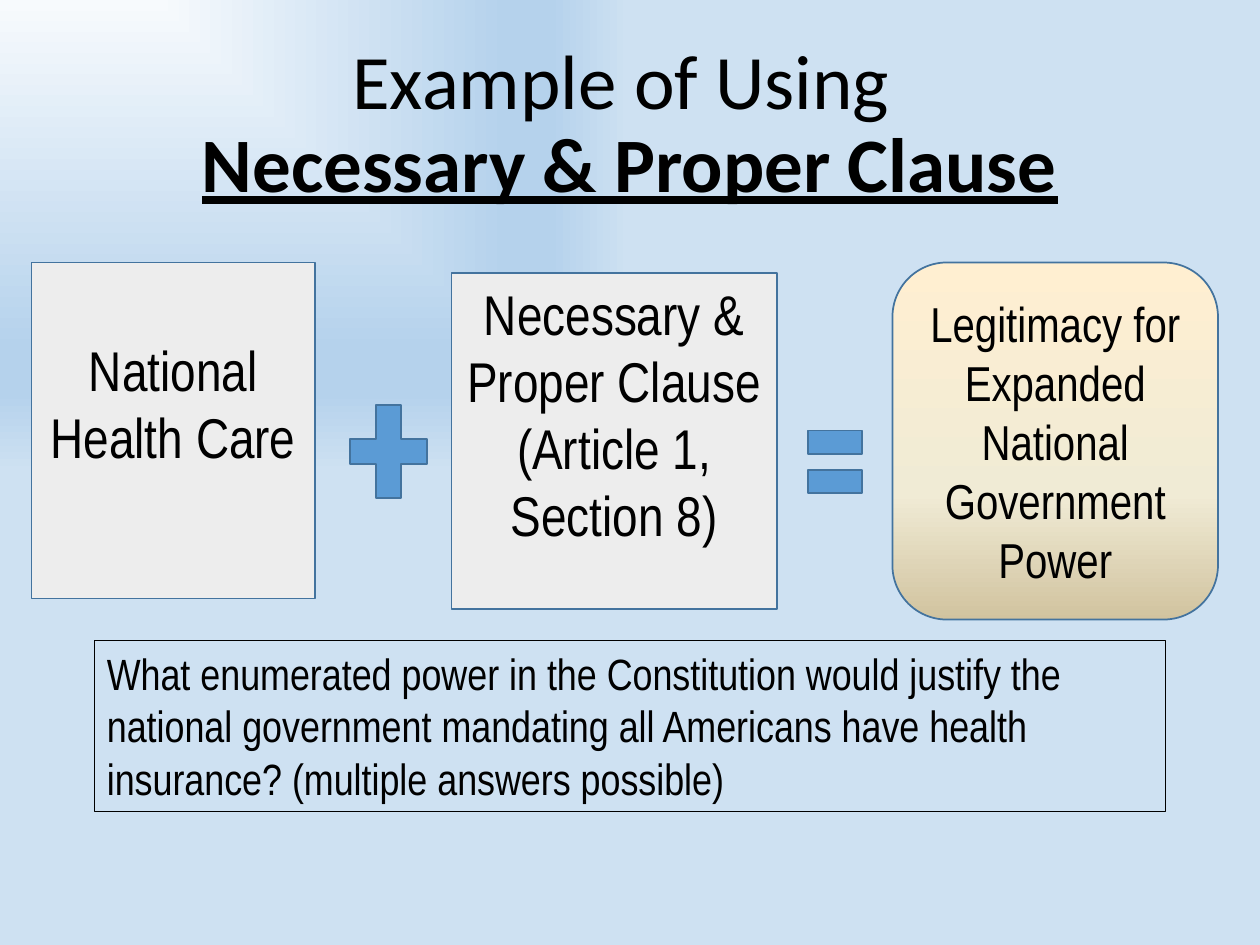
from lxml import etree
from pptx import Presentation
from pptx import util as u
from pptx.dml.color import RGBColor
from pptx.enum import shapes, text
from pptx.oxml.ns import qn

COLS, ROWS = 120, 90
HUES = {"ink": "000000", "grey": "EDEDED", "blue": "5B9BD5", "edge": "43739E"}
SKY = [(0, "F7FAFD"), (74, "B5D2EC"), (83, "B5D2EC"), (100, "CEE1F2")]
SAND = [(0, "FFEFD1"), (65, "F0EBD5"), (100, "D1C39F")]
FORM = shapes.MSO_SHAPE
MID = text.MSO_ANCHOR.MIDDLE
TOP = text.MSO_ANCHOR.TOP


def rgb(name):
    return RGBColor.from_string(HUES[name])


class Deck:
    def __init__(self):
        self.show = Presentation()
        self.show.slide_width, self.show.slide_height = u.Inches(10), u.Inches(7.5)
        self.slide = self.show.slides.add_slide(self.show.slide_layouts[6])
        self.face = "Arial Narrow"

    def place(self, col, row, wide, high):
        """Turn grid units into left, top, width and height."""
        across, down = self.show.slide_width / COLS, self.show.slide_height / ROWS
        return [round(n) for n in (col * across, row * down, wide * across, high * down)]

    def blend(self, fill, root, stops, angle=None):
        """Set a linear gradient, or one spreading from the top left corner."""
        fill.gradient()
        grad = next(root.iter(qn("a:gradFill")))
        for child in list(grad):
            grad.remove(child)
        chain = etree.SubElement(grad, qn("a:gsLst"))
        for share, hue in stops:
            stop = etree.SubElement(chain, qn("a:gs"), pos=str(share * 1000))
            etree.SubElement(stop, qn("a:srgbClr"), val=hue)
        if angle is None:
            glow = etree.SubElement(grad, qn("a:path"), path="rect")
            etree.SubElement(glow, qn("a:fillToRect"), r="100000", b="100000")
        else:
            etree.SubElement(grad, qn("a:lin"), ang=str(angle * 60000), scaled="0")

    def back(self, stops):
        self.blend(self.slide.background.fill, self.slide.element, stops)

    def title(self, spot, plain, strong):
        frame = self.slide.shapes.add_textbox(*self.place(*spot)).text_frame
        frame.word_wrap, frame.vertical_anchor = True, MID
        para = frame.paragraphs[0]
        para.alignment, para.line_spacing = text.PP_ALIGN.CENTER, 0.9
        para.font.name, para.font.size = "Calibri", u.Pt(44)
        para.font.color.rgb = rgb("ink")
        para.add_run().text = plain
        para.add_line_break()
        run = para.add_run()
        run.text = strong
        run.font.bold = run.font.underline = True

    def shape(self, form, spot, fill=None, edge="edge", width=1, tweaks=()):
        item = self.slide.shapes.add_shape(form, *self.place(*spot))
        item.shadow.inherit = False
        for i, value in enumerate(tweaks):
            item.adjustments[i] = value
        if isinstance(fill, list):
            self.blend(item.fill, item.element, fill, 90)
        elif fill:
            item.fill.solid()
            item.fill.fore_color.rgb = rgb(fill)
        else:
            item.fill.background()
        item.line.color.rgb = rgb(edge)
        item.line.width = u.Pt(width)
        return item

    def label(self, item, words, size, anchor=TOP, align=text.PP_ALIGN.CENTER, inset=0.05):
        frame = item.text_frame
        frame.word_wrap, frame.vertical_anchor = True, anchor
        frame.margin_top = u.Inches(inset)
        para = frame.paragraphs[0]
        para.text, para.alignment = words, align
        para.font.name, para.font.size = self.face, u.Pt(size)
        para.font.color.rgb = rgb("ink")


def main():
    deck = Deck()
    deck.back(SKY)
    deck.title((0, 3, 120, 18), "Example of Using ", "Necessary & Proper Clause")

    care = deck.shape(FORM.RECTANGLE, (3, 25, 27, 32), "grey")
    deck.label(care, "National Health Care", 32, inset=0.58)
    deck.shape(FORM.MATH_PLUS, (32, 37, 10, 12), "blue")
    clause = deck.shape(FORM.RECTANGLE, (43, 26, 31, 32), "grey")
    deck.label(clause, "Necessary & Proper Clause (Article 1, Section 8)", 32)
    deck.shape(FORM.MATH_EQUAL, (76, 41, 7, 6), "blue", tweaks=(0.37, 0.26))
    power = deck.shape(FORM.FLOWCHART_ALTERNATE_PROCESS, (85, 25, 31, 34), SAND)
    deck.label(power, "Legitimacy for Expanded National Government Power", 28, MID)

    ask = deck.shape(FORM.RECTANGLE, (9, 61, 102, 16.3), edge="ink", width=0.75)
    deck.label(ask, "What enumerated power in the Constitution would justify the national "
               "government mandating all Americans have health insurance? "
               "(multiple answers possible)", 25, align=text.PP_ALIGN.LEFT)
    deck.show.save("out.pptx")


if __name__ == "__main__":
    main()
